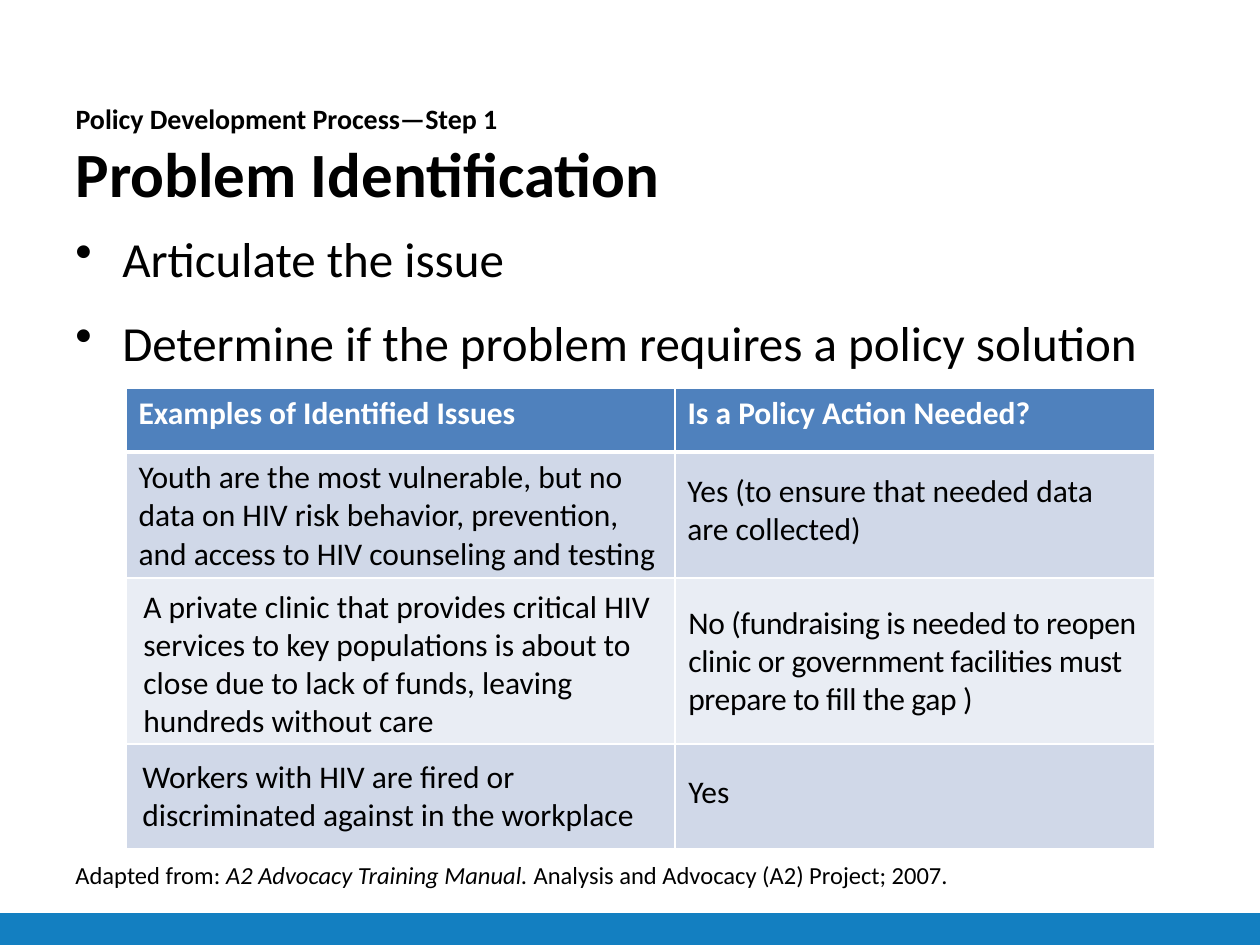
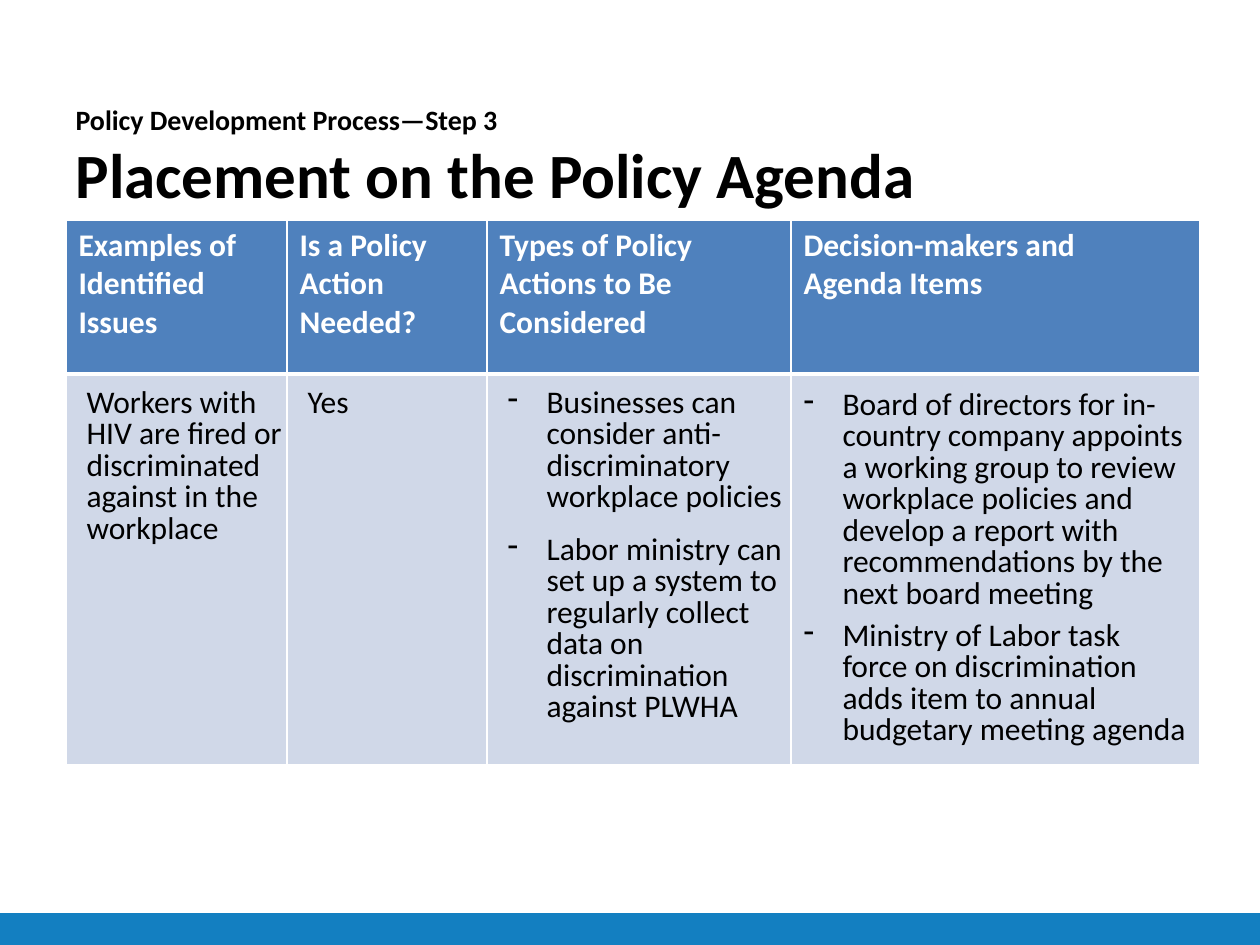
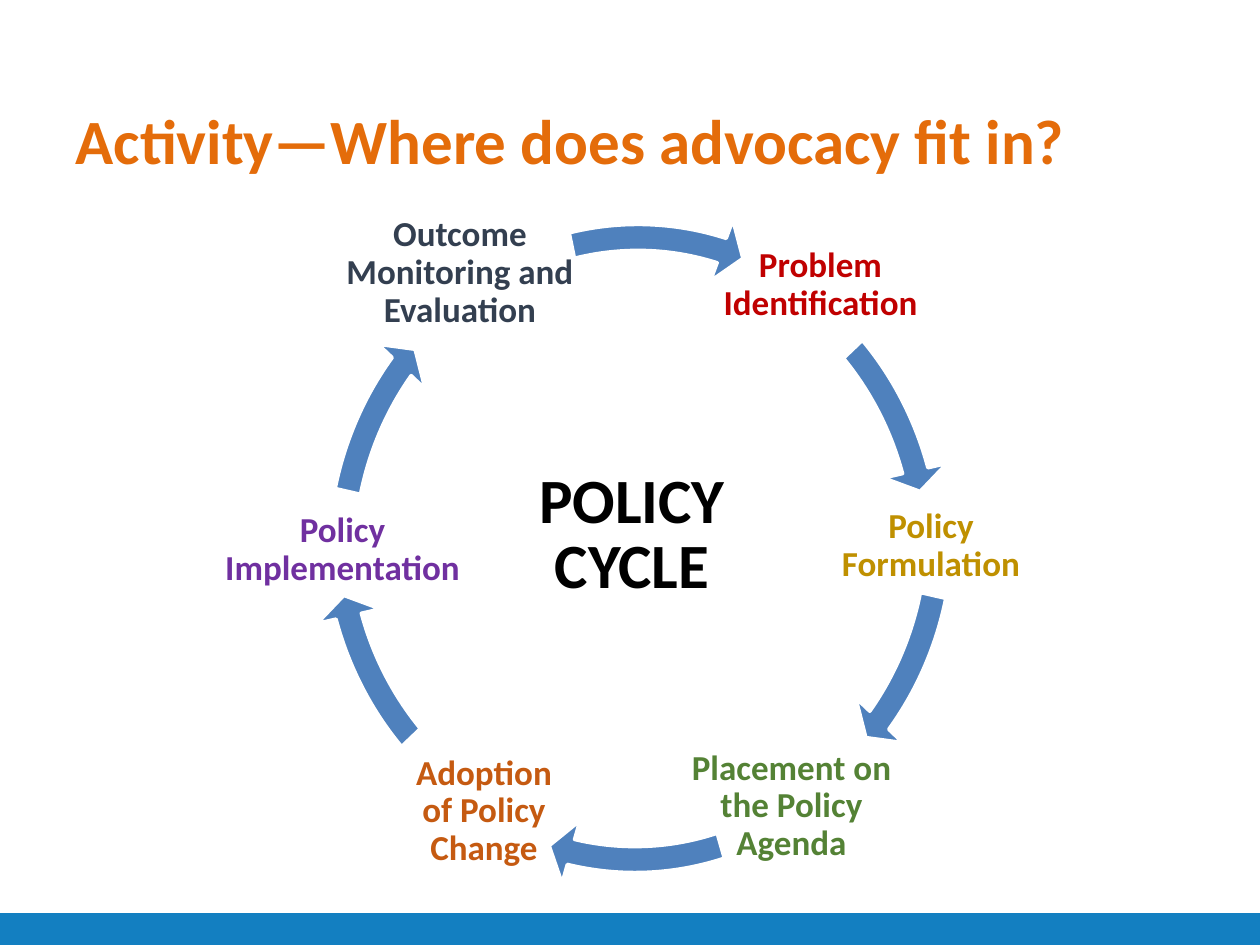
"""Builds three slides on the policy development process."""
from lxml.etree import SubElement
from pptx import Presentation
from pptx.dml.color import RGBColor
from pptx.enum.shapes import MSO_SHAPE
from pptx.enum.text import MSO_ANCHOR, MSO_AUTO_SIZE, PP_ALIGN
from pptx.oxml.ns import qn
from pptx.util import Pt

FONT = "Calibri"
BLACK = RGBColor(0x00, 0x00, 0x00)
WHITE = RGBColor(0xFF, 0xFF, 0xFF)
BAND_BLUE = RGBColor(0x13, 0x7F, 0xC1)
BLUE = RGBColor(0x4F, 0x81, 0xBD)
ROW_DARK = RGBColor(0xD0, 0xD8, 0xE8)
ROW_LIGHT = RGBColor(0xE9, 0xED, 0xF4)
ORANGE = RGBColor(0xE4, 0x6C, 0x0A)
RED = RGBColor(0xC0, 0x00, 0x00)
GOLD = RGBColor(0xBF, 0x90, 0x00)
GREEN = RGBColor(0x54, 0x82, 0x35)
RUST = RGBColor(0xC5, 0x5A, 0x11)
PURPLE = RGBColor(0x70, 0x30, 0xA0)
SLATE = RGBColor(0x33, 0x3F, 0x50)
NO_GRID_STYLE = "{2D5ABB26-0587-4C30-8999-92F81FD0307C}"
PX_PER_INCH = 126
DEGREE = 0.6


def px(length):
    """Turn pixels into EMU."""
    return round(length * 914400 / PX_PER_INCH)


def write(frame, text, size=18, color=BLACK, bold=False, align=PP_ALIGN.LEFT,
          line=None, before=0, bullet=None, indent=0, tracking=0):
    """Write paragraphs, each a string or a list of (text, format) spans."""
    paragraphs = text if isinstance(text, list) else [text]
    for number, content in enumerate(paragraphs):
        para = frame.add_paragraph() if number else frame.paragraphs[0]
        para.alignment = align
        para.space_before = Pt(before if number else 0)
        if line:
            para.line_spacing = line
        if bullet:
            properties = para._p.get_or_add_pPr()
            properties.set("marL", str(px(indent)))
            properties.set("indent", str(-px(indent)))
            SubElement(properties, qn("a:buChar"), char=bullet)
        spans = [(content, {})] if isinstance(content, str) else content
        for words, style in spans:
            points = style.get("size", size)
            for position, part in enumerate(words.split("\n")):
                if position:
                    para.add_line_break()
                    SubElement(para._p[-1], qn("a:rPr"), sz=str(points * 100))
                if not part:
                    continue
                span = para.add_run()
                span.text = part
                span.font.name = FONT
                span.font.size = Pt(points)
                span.font.bold = bold
                span.font.italic = style.get("italic", False)
                span.font.color.rgb = color
                if tracking:
                    span._r.get_or_add_rPr().set("spc", str(tracking))


def set_borders(cell, **widths):
    """Draw white borders with a width in points for each side."""
    properties = cell._tc.get_or_add_tcPr()
    for place, side in enumerate(("L", "R", "T", "B")):
        border = properties.makeelement(qn(f"a:ln{side}"), {"w": str(Pt(widths.get(side, 1)))})
        fill = SubElement(border, qn("a:solidFill"))
        SubElement(fill, qn("a:srgbClr"), val=str(WHITE))
        properties.insert(place, border)


class Pages:
    """Holds the deck, its style and the current slide."""

    def __init__(self):
        self.deck = Presentation()
        self.deck.slide_width = px(1260)
        self.deck.slide_height = px(945)
        self.page = None

    def start(self, title, kicker=None, top=95, height=157, color=BLACK):
        """Add a slide with its title and bottom band."""
        self.page = self.deck.slides.add_slide(self.deck.slide_layouts[5])
        box = self.page.shapes.title
        box.left, box.top, box.width, box.height = map(px, (63, top, 1134, height))
        frame = box.text_frame
        frame.word_wrap = True
        frame.auto_size = MSO_AUTO_SIZE.NONE
        frame.vertical_anchor = MSO_ANCHOR.TOP
        spans = [(title, {})]
        if kicker:
            spans.insert(0, (kicker + "\n", {"size": 16}))
        write(frame, [spans], size=36, color=color, bold=True)
        band = self.shape(MSO_SHAPE.RECTANGLE, (0, 913, 1260, 32), BAND_BLUE)
        band.line.fill.background()

    def shape(self, kind, area, fill):
        """Add a filled preset shape."""
        shape = self.page.shapes.add_shape(kind, *map(px, area))
        shape.shadow.inherit = False
        shape.fill.solid()
        shape.fill.fore_color.rgb = fill
        return shape

    def text(self, area, text, inset=None, anchor=MSO_ANCHOR.TOP, **style):
        """Add a wrapped text box."""
        frame = self.page.shapes.add_textbox(*map(px, area)).text_frame
        frame.word_wrap = True
        frame.vertical_anchor = anchor
        if inset is not None:
            frame.margin_left = frame.margin_right = px(inset)
            frame.margin_top = frame.margin_bottom = px(inset)
        write(frame, text, **style)

    def table(self, corner, columns, rows):
        """Add a plain table and return it."""
        area = (*corner, sum(columns), sum(rows))
        frame = self.page.shapes.add_table(len(rows), len(columns), *map(px, area))
        table = frame.table
        table.first_row = table.horz_banding = False
        table._tbl.tblPr.find(qn("a:tableStyleId")).text = NO_GRID_STYLE
        for column, width in zip(table.columns, columns):
            column.width = px(width)
        for row, height in zip(table.rows, rows):
            row.height = px(height)
        for cell in table.iter_cells():
            cell.fill.background()
        return table

    def banded_table(self, corner, columns, rows, headings):
        """Add a table with a blue heading row and banded rows."""
        table = self.table(corner, columns, rows)
        for index in range(len(rows)):
            for column, heading in enumerate(headings):
                cell = table.cell(index, column)
                cell.fill.solid()
                if index == 0:
                    cell.fill.fore_color.rgb = BLUE
                    write(cell.text_frame, heading, color=WHITE, bold=True)
                    set_borders(cell, B=3)
                else:
                    cell.fill.fore_color.rgb = ROW_DARK if index % 2 else ROW_LIGHT
                    set_borders(cell, T=3 if index == 1 else 1)
        return table

    def cycle_arrow(self, corner, start, sweep, rotation=0):
        """Add an arc arrow that sweeps clockwise from a start angle."""
        arrow = self.shape(MSO_SHAPE.CIRCULAR_ARROW, (*corner, 648, 690), BLUE)
        arrow.line.color.rgb = WHITE
        arrow.line.width = Pt(2)
        arrow.rotation = rotation
        end = (start + sweep) % 360
        settings = (0.04, 4.17 * DEGREE, end * DEGREE, start * DEGREE, 0.05)
        for index, value in enumerate(settings):
            arrow.adjustments[index] = value


def problem_identification(pages):
    """Build the slide on step 1."""
    pages.start("Problem Identification", "Policy Development Process—Step 1")
    pages.text((63, 218, 1134, 180),
               ["Articulate the issue", "Determine if the problem requires a policy solution"],
               size=28, line=Pt(36), before=12, bullet="•", indent=47)
    table = pages.banded_table((126, 388), (549, 480), (64, 125, 166, 105),
                               ("Examples of Identified Issues", "Is a Policy Action Needed?"))
    write(table.cell(1, 0).text_frame,
          "Youth are the most vulnerable, but no data on HIV risk behavior, "
          "prevention, and access to HIV counseling and testing")
    pages.text((675, 465, 451, 89), "Yes (to ensure that needed data are collected)")
    pages.text((131, 581, 546, 165),
               "A private clinic that provides critical HIV services to key populations "
               "is about to close due to lack of funds, leaving hundreds without care")
    pages.text((676, 597, 479, 127),
               "No (fundraising is needed to reopen clinic or government facilities "
               "must prepare to fill the gap )", tracking=-20)
    pages.text((130, 751, 546, 89),
               "Workers with HIV are fired or discriminated against in the workplace")
    pages.text((676, 766, 451, 50), "Yes")
    pages.text((63, 854, 977, 43),
               [[("Adapted from: ", {}),
                 ("A2 Advocacy Training Manual.", {"italic": True}),
                 (" Analysis and Advocacy (A2) Project; 2007.", {})]], size=14)


def policy_agenda(pages):
    """Build the slide on step 3."""
    pages.start("Placement on the Policy Agenda", "Policy Development Process—Step 3",
                top=96, height=125)
    columns = (221, 200, 304, 409)
    tight = {"line": Pt(18)}
    dashed = {"bullet": "-", "indent": 39, **tight}
    pages.banded_table((66, 220), columns, (154, 391),
                       ("Examples of Identified Issues", "Is a Policy Action Needed?",
                        "Types of Policy Actions to Be Considered",
                        "Decision-makers and\nAgenda Items"))
    actions = pages.table((74, 384), columns, (399,))
    write(actions.cell(0, 0).text_frame,
          "Workers with HIV are fired or discriminated against in the workplace", **tight)
    write(actions.cell(0, 1).text_frame, "Yes", **tight)
    write(actions.cell(0, 2).text_frame,
          ["Businesses can consider anti-discriminatory workplace policies",
           "Labor ministry can set up a system to regularly collect data on "
           "discrimination against PLWHA"], before=12, **dashed)
    agenda = pages.table((66, 386), columns, (370,))
    write(agenda.cell(0, 3).text_frame,
          ["Board of directors for in-country company appoints a working group to review "
           "workplace policies and develop a report with recommendations by the next "
           "board meeting",
           "Ministry of Labor task force on discrimination adds item to annual budgetary "
           "meeting agenda"], before=6, **dashed)


def policy_cycle(pages):
    """Build the slide with the cycle of six stages."""
    pages.start("Activity—Where does advocacy fit in?", color=ORANGE)
    pages.text((514, 465, 236, 144), "POLICY CYCLE", size=36, bold=True,
               align=PP_ALIGN.CENTER, line=Pt(37))
    stages = (
        ("Problem Identification", RED, (717, 215, 207), (311, 212), 316.38, 26.51, 0),
        ("Policy Formulation", GOLD, (835, 476, 192), (324, 185), 12.94, 26.51, 0),
        ("Placement on the Policy Agenda", GREEN, (688, 736, 207), (311, 202), 73.98, 27.87, 0),
        ("Adoption of Policy Change", RUST, (396, 741, 176), (305, 185), 136.38, 26.51, 0),
        ("Policy Implementation", PURPLE, (221, 480, 243), (309, 212), 192.94, 26.51, 0),
        ("Outcome Monitoring and Evaluation", SLATE, (339, 203, 242), (311, 205),
         253.98, 27.87, 4.3),
    )
    for name, color, place, corner, start, sweep, rotation in stages:
        pages.text((*place, 141), name, inset=3, anchor=MSO_ANCHOR.MIDDLE, size=20,
                   color=color, bold=True, align=PP_ALIGN.CENTER, line=0.9)
        pages.cycle_arrow(corner, start, sweep, rotation)


def main():
    """Build and save the deck."""
    pages = Pages()
    problem_identification(pages)
    policy_agenda(pages)
    policy_cycle(pages)
    pages.deck.save("out.pptx")


if __name__ == "__main__":
    main()
